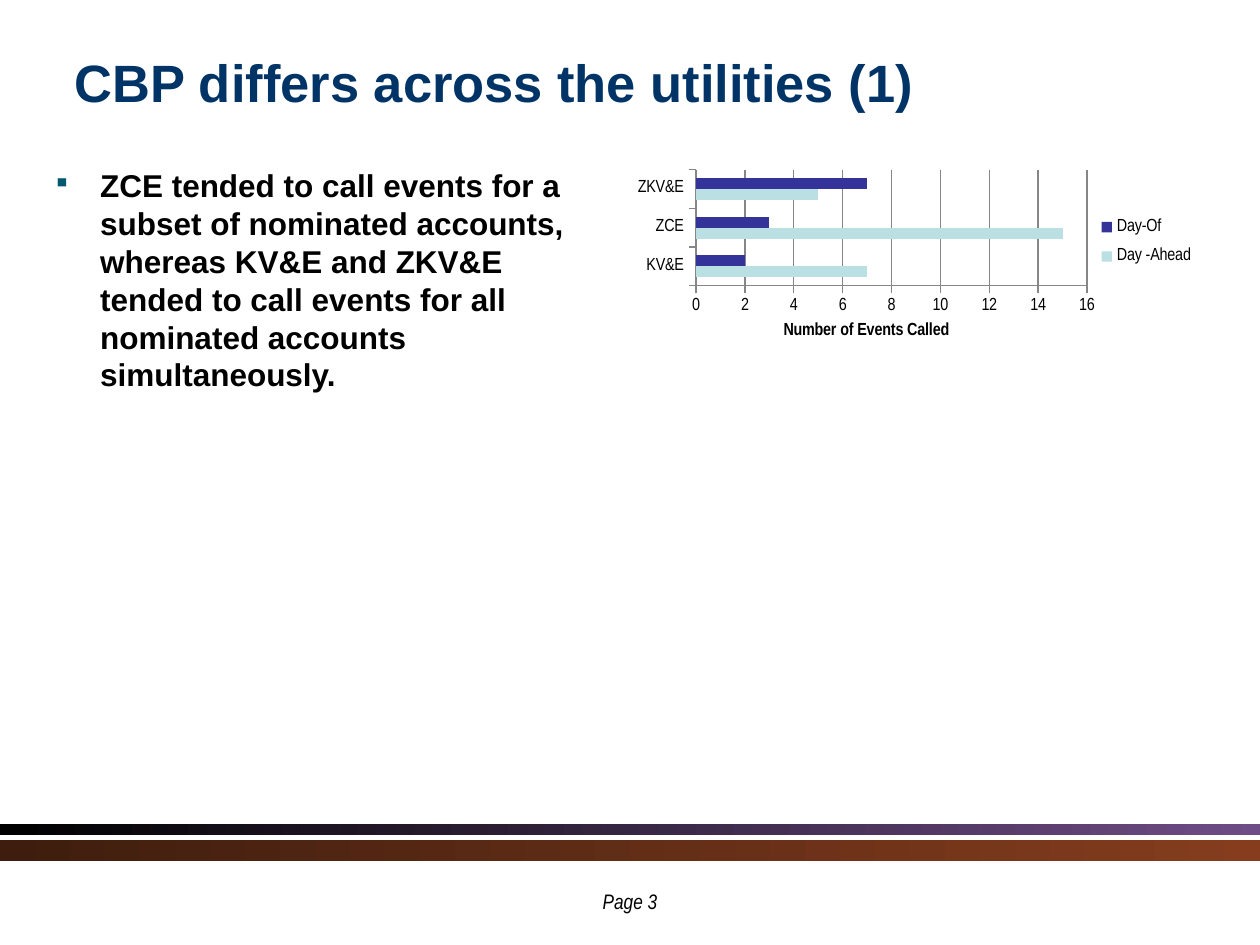
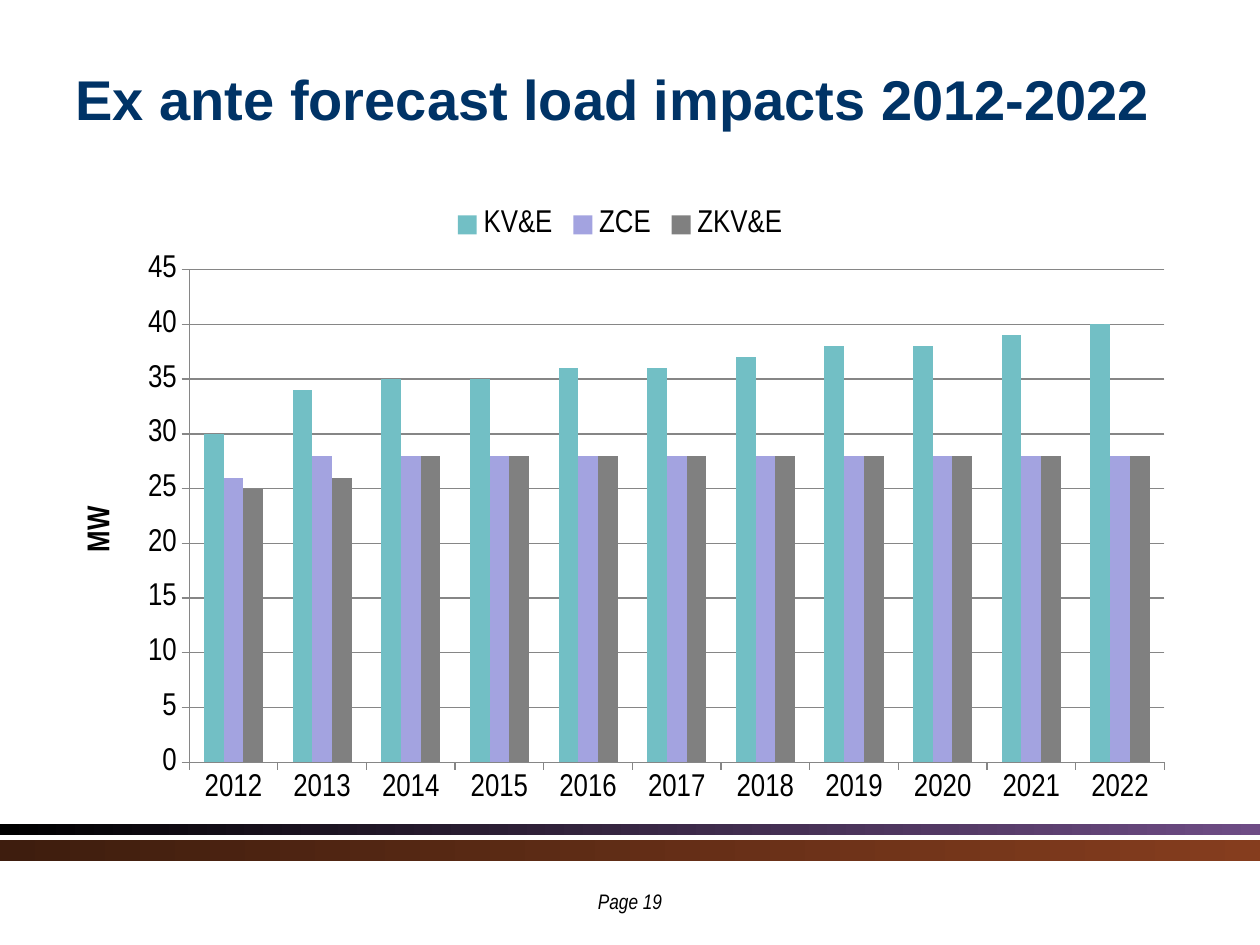
from lxml.etree import SubElement
from pptx import Presentation
from pptx.chart.data import CategoryChartData
from pptx.dml.color import RGBColor
from pptx.enum.chart import XL_CHART_TYPE, XL_LEGEND_POSITION, XL_TICK_MARK
from pptx.enum.shapes import MSO_SHAPE
from pptx.enum.text import MSO_ANCHOR, MSO_AUTO_SIZE, PP_ALIGN
from pptx.oxml import parse_xml
from pptx.oxml.ns import nsdecls, qn
from pptx.util import Cm, Pt

COLORS = {
    "title": "003366", "text": "000000", "bullet": "00596F", "axis": "868686",
    "night": "000000", "violet": "6E4C85", "umber": "3E1D0E", "rust": "853D1E",
    "navy": "333399", "ice": "BBE0E3", "teal": "72BFC5", "lilac": "A3A3E0",
    "gray": "808080",
}
STYLES = {
    "title": {"name": "Arial", "bold": True, "color": "title"},
    "body": {"name": "Arial", "size": Pt(18), "bold": True, "color": "text"},
    "page": {"name": "Arial Narrow", "size": Pt(12), "italic": True, "color": "text"},
    "chart": {"name": "Arial Narrow", "color": "text"},
}
SLIDE_WIDTH, SLIDE_HEIGHT = 25.4, 19.05
BANDS = [
    {"top": 16.62, "height": 0.22, "stops": ("night", "violet")},
    {"top": 16.93, "height": 0.43, "stops": ("umber", "rust")},
]
PAGE_BOX = (9.99, 17.78, 5.42, 0.56)
TEXT_INDENT, BULLET_INDENT = 0.96, 1.06

SLIDES = [
    {
        "title": "CBP differs across the utilities (1)",
        "title_box": (1.25, 0, 22.86, 3.28),
        "title_size": 30,
        "page": 3,
        "bullets": [
            "ZCE tended to call events for a subset of nominated accounts, "
            "whereas KV&E and ZKV&E tended to call events for all nominated "
            "accounts simultaneously.",
        ],
        "bullet_box": (0.81, 3.23, 11.4, 12.07),
        "chart": {
            "type": XL_CHART_TYPE.BAR_CLUSTERED,
            "box": (12.6, 3.34, 11.94, 4.04),
            "plot": {"x": 0.12, "y": 0.02, "w": 0.66, "h": 0.58},
            "size": 10,
            "legend": XL_LEGEND_POSITION.RIGHT,
            "legend_area": {"x": 0.79, "y": 0.2, "w": 0.18, "h": 0.36},
            "axis_title": "Number of Events Called",
            "title_turn": 0,
            "maximum": 16,
            "step": 2,
            "categories": ["KV&E", "ZCE", "ZKV&E"],
            "series": [
                ("Day -Ahead", "ice", (7, 15, 5)),
                ("Day-Of", "navy", (2, 3, 7)),
            ],
        },
    },
    {
        "title": "Ex ante forecast load impacts 2012-2022",
        "title_box": (1.27, 0.78, 22.86, 2.41),
        "title_size": 32,
        "page": 19,
        "chart": {
            "type": XL_CHART_TYPE.COLUMN_CLUSTERED,
            "box": (1.07, 3.93, 22.86, 12.57),
            "plot": {"x": 0.12, "y": 0.12, "w": 0.86, "h": 0.79},
            "size": 18,
            "legend": XL_LEGEND_POSITION.TOP,
            "axis_title": "MW",
            "title_turn": -90,
            "maximum": 45,
            "step": 5,
            "categories": [str(year) for year in range(2012, 2023)],
            "series": [
                ("KV&E", "teal", (30, 34, 35, 35, 36, 36, 37, 38, 38, 39, 40)),
                ("ZCE", "lilac", (26,) + (28,) * 10),
                ("ZKV&E", "gray", (25, 26) + (28,) * 9),
            ],
        },
    },
]


def color_of(name):
    return RGBColor.from_string(COLORS[name])


def format_font(font, style, **extra):
    for attribute, value in {**STYLES[style], **extra}.items():
        if attribute == "color":
            font.color.rgb = color_of(value)
        else:
            setattr(font, attribute, value)


def lengths(box):
    return [Cm(value) for value in box]


def add_band(slide, band):
    box = (0, band["top"], SLIDE_WIDTH, band["height"])
    shape = slide.shapes.add_shape(MSO_SHAPE.RECTANGLE, *lengths(box))
    shape.shadow.inherit = False
    shape.line.fill.background()
    shape.fill.gradient()
    shape.fill.gradient_angle = 0
    for stop, name in zip(shape.fill.gradient_stops, band["stops"]):
        stop.color.rgb = color_of(name)


def add_title(slide, content):
    title = slide.shapes.title
    title.left, title.top, title.width, title.height = lengths(content["title_box"])
    frame = title.text_frame
    frame.text = content["title"]
    frame.auto_size = MSO_AUTO_SIZE.NONE
    frame.vertical_anchor = MSO_ANCHOR.MIDDLE
    paragraph = frame.paragraphs[0]
    paragraph.alignment = PP_ALIGN.LEFT
    format_font(paragraph.font, "title", size=Pt(content["title_size"]))


def add_page_number(slide, number):
    frame = slide.shapes.add_textbox(*lengths(PAGE_BOX)).text_frame
    frame.word_wrap = True
    paragraph = frame.paragraphs[0]
    paragraph.text = f"Page {number}"
    paragraph.alignment = PP_ALIGN.CENTER
    format_font(paragraph.font, "page")


def add_bullets(slide, box, bullets):
    frame = slide.shapes.add_textbox(*lengths(box)).text_frame
    frame.word_wrap = True
    for index, text in enumerate(bullets):
        paragraph = frame.add_paragraph() if index else frame.paragraphs[0]
        paragraph.text = text
        properties = paragraph._p.get_or_add_pPr()
        properties.set("marL", str(Cm(TEXT_INDENT)))
        properties.set("indent", str(-Cm(BULLET_INDENT)))
        bullet_color = SubElement(properties, qn("a:buClr"))
        SubElement(bullet_color, qn("a:srgbClr")).set("val", COLORS["bullet"])
        SubElement(properties, qn("a:buSzPct")).set("val", "80000")
        SubElement(properties, qn("a:buChar")).set("char", "▪")
        format_font(paragraph.font, "body")


def place_part(part, index, area):
    for layout in part.findall(qn("c:layout")):
        part.remove(layout)
    values = {"xMode": "edge", "yMode": "edge", **area}
    settings = "".join(f'<c:{tag} val="{value}"/>' for tag, value in values.items())
    part.insert(index, parse_xml(
        f"<c:layout {nsdecls('c')}><c:manualLayout>{settings}</c:manualLayout></c:layout>"
    ))


def add_bar_chart(slide, content):
    data = CategoryChartData()
    data.categories = content["categories"]
    for name, _, values in content["series"]:
        data.add_series(name, values)
    frame = slide.shapes.add_chart(content["type"], *lengths(content["box"]), data)
    chart = frame.chart
    size = Pt(content["size"])
    format_font(chart.font, "chart", size=size)
    chart.has_title = False
    chart.has_legend = True
    chart.legend.position = content["legend"]
    chart.legend.include_in_layout = False

    bars = chart.plots[0]
    bars.gap_width, bars.overlap, bars.vary_by_categories = 150, 0, False
    for series, (_, color, _) in zip(bars.series, content["series"]):
        series.format.fill.solid()
        series.format.fill.fore_color.rgb = color_of(color)

    value_axis = chart.value_axis
    value_axis.minimum_scale = 0
    value_axis.maximum_scale = content["maximum"]
    value_axis.major_unit = content["step"]
    value_axis.has_major_gridlines = True
    for axis in (chart.category_axis, value_axis):
        axis.major_tick_mark = XL_TICK_MARK.OUTSIDE
    for line in (chart.category_axis.format.line, value_axis.format.line,
                 value_axis.major_gridlines.format.line):
        line.color.rgb = color_of("axis")
        line.width = Pt(0.75)

    title_frame = value_axis.axis_title.text_frame
    title_frame.text = content["axis_title"]
    title_frame._txBody.bodyPr.set("rot", str(content["title_turn"] * 60000))
    format_font(title_frame.paragraphs[0].runs[0].font, "chart", size=size, bold=True)

    chart_parts = chart._chartSpace.find(qn("c:chart"))
    place_part(chart_parts.find(qn("c:plotArea")), 0,
               {"layoutTarget": "inner", **content["plot"]})
    if "legend_area" in content:
        place_part(chart_parts.find(qn("c:legend")), 1, content["legend_area"])


def main():
    presentation = Presentation()
    presentation.slide_width, presentation.slide_height = lengths((SLIDE_WIDTH, SLIDE_HEIGHT))
    title_only = presentation.slide_layouts[5]
    for content in SLIDES:
        slide = presentation.slides.add_slide(title_only)
        for band in BANDS:
            add_band(slide, band)
        add_title(slide, content)
        add_page_number(slide, content["page"])
        if "bullets" in content:
            add_bullets(slide, content["bullet_box"], content["bullets"])
        add_bar_chart(slide, content["chart"])
    presentation.save("out.pptx")


if __name__ == "__main__":
    main()
